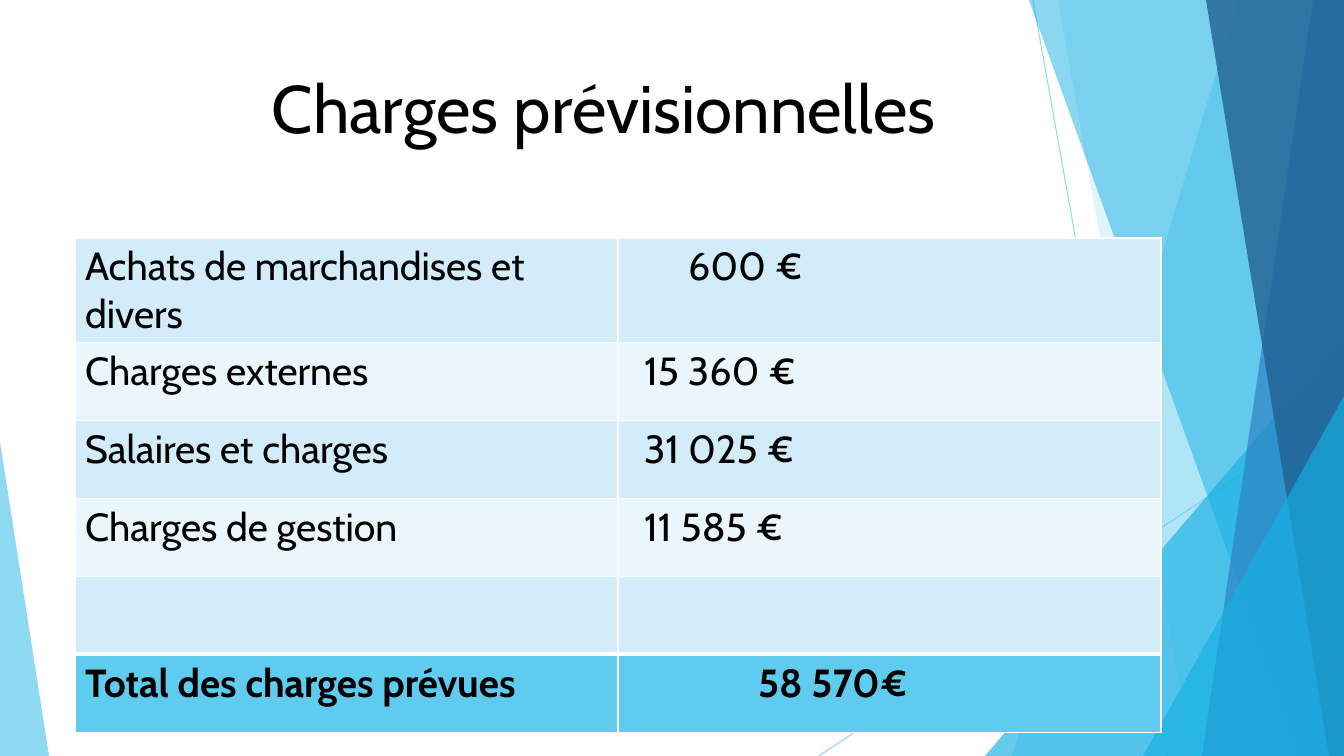
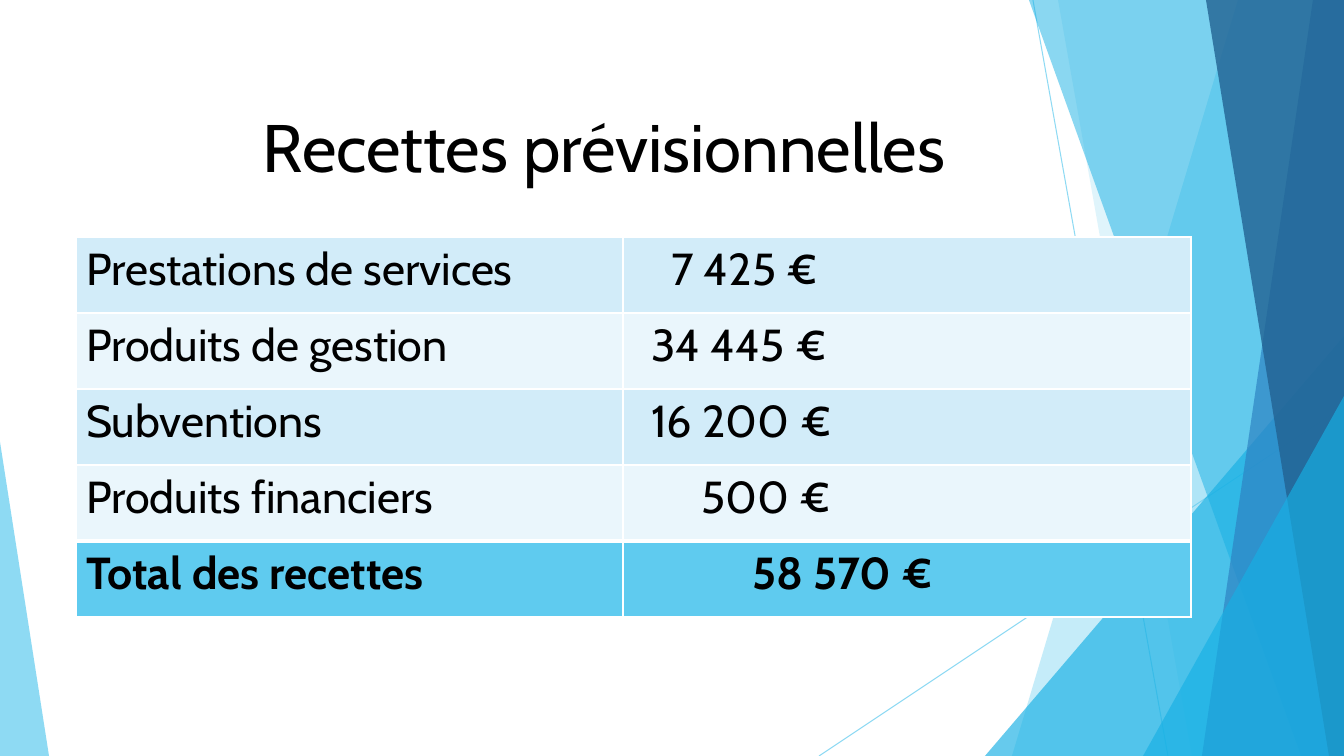
from lxml import etree
from pptx import Presentation
from pptx import util as u
from pptx.dml import color
from pptx.enum import shapes, text
from pptx.oxml import ns

WIDTH, HEIGHT = 1344, 756
PX = 12192000 / WIDTH
FONT = "Cabin"
BLACK, WHITE = "000000", "FFFFFF"
SKY, CYAN, BLUE, NAVY = "5FCBEF", "17B0E4", "2E83C3", "226292"
BANDS = ("D2ECF9", "EAF6FC")


def px(length):
    """Turn px into EMU."""
    return u.Emu(round(length * PX))


def rgb(code):
    """Turn a hex string into a colour."""
    return color.RGBColor.from_string(code)


def fade(shape, opacity):
    """Give every colour of a shape's fill and line an opacity in percent."""
    for tint in shape._element.spPr.iter(ns.qn("a:srgbClr")):
        etree.SubElement(tint, ns.qn("a:alpha"), val=str(opacity * 1000))


def write(frame, content, *, size, bold=False, indent=0):
    """Write one left-aligned paragraph, indented by px."""
    paragraph = frame.paragraphs[0]
    paragraph.alignment = text.PP_ALIGN.LEFT
    if indent:
        properties = paragraph._p.get_or_add_pPr()
        properties.set("marL", str(px(indent)))
        properties.set("indent", "0")
    run = paragraph.add_run()
    run.text = content
    run.font.name = FONT
    run.font.size = u.Pt(size)
    run.font.bold = bold
    run.font.color.rgb = rgb(BLACK)


def paint(shape, fill, opacity):
    """Fill a shape with a translucent colour and no outline."""
    shape.shadow.inherit = False
    shape.fill.solid()
    shape.fill.fore_color.rgb = rgb(fill)
    shape.line.fill.background()
    fade(shape, opacity)


def add_ray(slide, start, end):
    """Draw a thin translucent line."""
    ray = slide.shapes.add_connector(
        shapes.MSO_CONNECTOR.STRAIGHT, *map(px, (*start, *end)))
    ray.line.color.rgb = rgb(SKY)
    ray.line.width = u.Pt(0.75)
    fade(ray, 70)
    etree.SubElement(ray._element.spPr, ns.qn("a:effectLst"))


def add_band(slide, top_x, bottom_x, fill, opacity):
    """Draw a full-height band from a slanted edge to the right side."""
    outline = slide.shapes.build_freeform(top_x, 0, scale=PX)
    outline.add_line_segments(
        [(WIDTH, 0), (WIDTH, HEIGHT), (bottom_x, HEIGHT)], close=True)
    paint(outline.convert_to_shape(), fill, opacity)


def add_facet(slide, left, top, width, apex, fill, opacity):
    """Draw a right triangle standing on the slide's bottom edge."""
    facet = slide.shapes.add_shape(
        shapes.MSO_SHAPE.ISOSCELES_TRIANGLE,
        *map(px, (left, top, width, HEIGHT - top)))
    facet.adjustments[0] = apex
    paint(facet, fill, opacity)


def add_backdrop(slide):
    """Draw the faceted decoration shared by the slides."""
    add_ray(slide, (1033, 0), (1168, HEIGHT))
    add_ray(slide, (WIDTH, 406), (819, HEIGHT))
    add_band(slide, 1238, 1012, SKY, 36)
    add_band(slide, 1058, 1192, SKY, 20)
    add_facet(slide, 985, 336, 359, 1, CYAN, 66)
    add_band(slide, 1029, 1301, CYAN, 50)
    add_band(slide, 1313, 1202, BLUE, 70)
    add_band(slide, 1206, 1329, NAVY, 80)
    add_facet(slide, 1143, 396, 201, 1, CYAN, 66)
    add_facet(slide, 0, 442, 49, 0, SKY, 70)


def add_title(slide, box, content):
    """Place the slide title in its box."""
    frame = slide.shapes.add_textbox(*map(px, box)).text_frame
    frame.word_wrap = True
    frame.vertical_anchor = text.MSO_ANCHOR.TOP
    write(frame, content, size=48)


def set_borders(cell, top=1, bottom=1):
    """Draw white borders around a cell, widths in points."""
    properties = cell._tc.get_or_add_tcPr()
    for side, width in zip("LRTB", (1, 1, top, bottom)):
        edge = etree.SubElement(
            properties, ns.qn(f"a:ln{side}"), w=str(u.Pt(width)))
        fill = etree.SubElement(edge, ns.qn("a:solidFill"))
        etree.SubElement(fill, ns.qn("a:srgbClr"), val=WHITE)


def add_budget(slide, origin, columns, row_height, size, entries):
    """Place a banded table of labels and amounts that ends with a total."""
    box = (*origin, sum(columns), row_height * len(entries))
    budget = slide.shapes.add_table(
        len(entries), len(columns), *map(px, box)).table
    budget.first_row = budget.horz_banding = False
    for column, width in zip(budget.columns, columns):
        column.width = px(width)
    total = len(entries) - 1
    for row, (label, amount, indent) in enumerate(entries):
        is_total = row == total
        for cell, content, offset in zip(
                budget.rows[row].cells, (label, amount), (0, indent)):
            set_borders(cell, top=3 if is_total else 1,
                        bottom=3 if row == total - 1 else 1)
            cell.fill.solid()
            cell.fill.fore_color.rgb = rgb(SKY if is_total else BANDS[row % 2])
            if content:
                write(cell.text_frame, content, size=size,
                      bold=is_total, indent=offset)


def add_budget_slide(deck, title, title_box, **budget):
    """Add a slide with the backdrop, a title and a budget table."""
    slide = deck.slides.add_slide(deck.slide_layouts[6])
    add_backdrop(slide)
    add_title(slide, title_box, title)
    add_budget(slide, **budget)


def main():
    """Build and save the deck."""
    deck = Presentation()
    deck.slide_width, deck.slide_height = px(WIDTH), px(HEIGHT)
    add_budget_slide(
        deck, "Charges prévisionnelles", (262, 61, 839, 102),
        origin=(75, 238), columns=(543, 543), row_height=78, size=28,
        entries=[
            ("Achats de marchandises et divers", "600 €", 60),
            ("Charges externes", "15 360 €", 16),
            ("Salaires et charges", "31 025 €", 16),
            ("Charges de gestion", "11 585 €", 16),
            ("", "", 0),
            ("Total des charges prévues", "58 570€", 130),
        ])
    add_budget_slide(
        deck, "Recettes prévisionnelles", (253, 100, 848, 65),
        origin=(76, 237), columns=(547, 568), row_height=76, size=32,
        entries=[
            ("Prestations de services", "7 425 €", 38),
            ("Produits de gestion", "34 445 €", 18),
            ("Subventions", "16 200 €", 18),
            ("Produits financiers", "500 €", 68),
            ("Total des recettes", "58 570 €", 119),
        ])
    deck.save("out.pptx")


if __name__ == "__main__":
    main()
